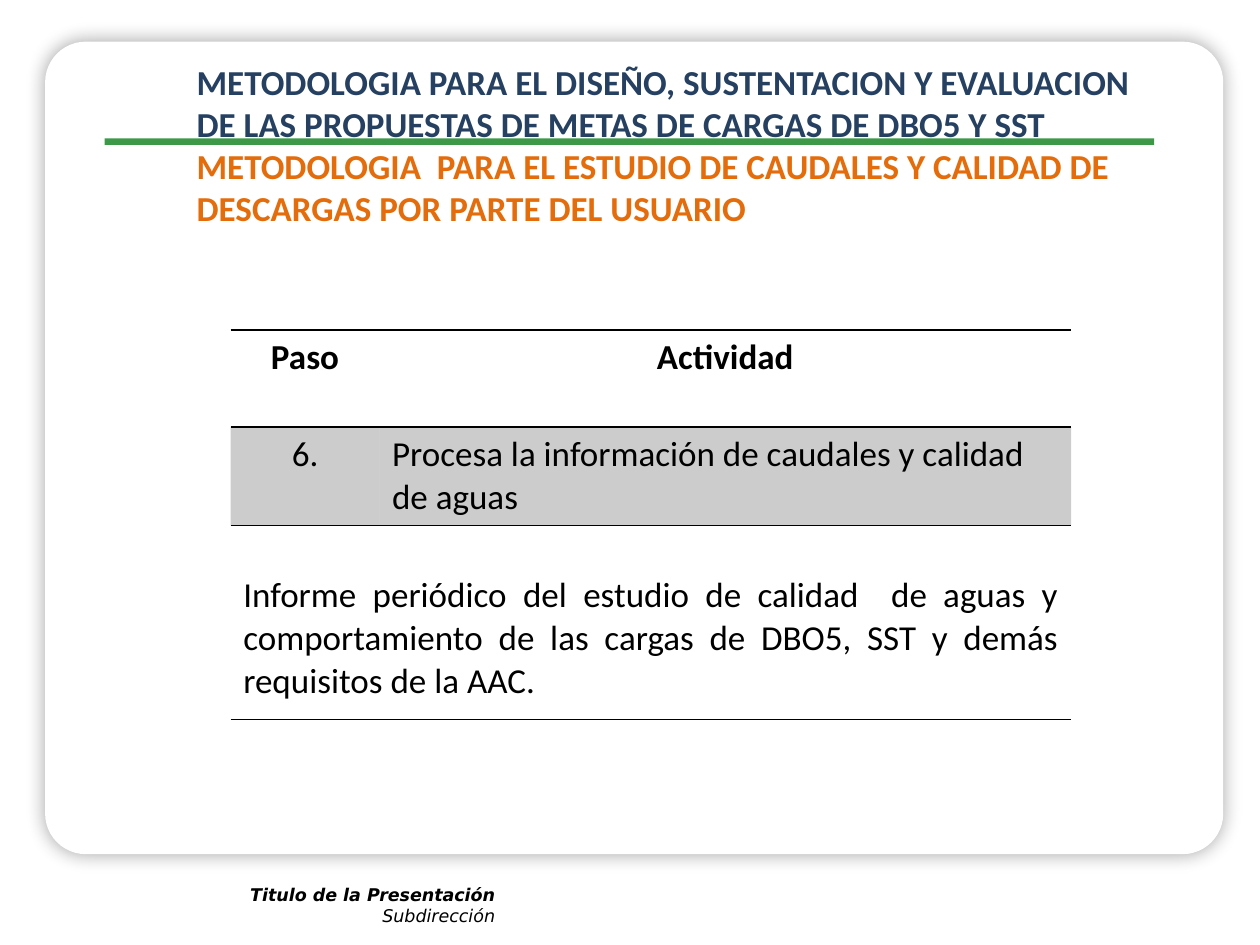
from lxml import etree
from pptx import Presentation
from pptx.dml.color import RGBColor
from pptx.enum.shapes import MSO_SHAPE
from pptx.enum.text import MSO_ANCHOR, MSO_AUTO_SIZE, PP_ALIGN
from pptx.oxml import parse_xml
from pptx.oxml.ns import nsdecls, qn
from pptx.util import Cm, Pt

ROUNDED, RECTANGLE = MSO_SHAPE.ROUNDED_RECTANGLE, MSO_SHAPE.RECTANGLE
TOP, NO_FIT = MSO_ANCHOR.TOP, MSO_AUTO_SIZE.NONE
LEFT, CENTER, RIGHT, JUSTIFY = PP_ALIGN.LEFT, PP_ALIGN.CENTER, PP_ALIGN.RIGHT, PP_ALIGN.JUSTIFY
BLACK = RGBColor(0x00, 0x00, 0x00)
WHITE = RGBColor(0xFF, 0xFF, 0xFF)
GREEN = RGBColor(0x3D, 0x99, 0x48)
NAVY = RGBColor(0x25, 0x40, 0x61)
ORANGE = RGBColor(0xE4, 0x6C, 0x0A)
NO_GRID_STYLE = "{2D5ABB26-0587-4C30-8999-92F81FD0307C}"


def add_run(paragraph, text, size, color, bold=False, italic=False, font="Calibri"):
    run = paragraph.add_run()
    run.text = text
    run.font.name = font
    run.font.size = Pt(size)
    run.font.color.rgb = color
    run.font.bold = bold
    run.font.italic = italic


def add_border(cell, side):
    border = parse_xml(
        f'<a:{side} {nsdecls("a")} w="12700"><a:solidFill>'
        f'<a:srgbClr val="{BLACK}"/></a:solidFill></a:{side}>'
    )
    properties = cell._tc.get_or_add_tcPr()
    properties.insert(len(properties.findall(qn("a:lnT"))), border)


prs = Presentation()
prs.slide_width, prs.slide_height = Cm(25.4), Cm(19.05)
slide = prs.slides.add_slide(prs.slide_layouts[5])
shapes = slide.shapes

panel = shapes.add_shape(ROUNDED, Cm(0.91), Cm(0.84), Cm(23.75), Cm(16.38))
panel.adjustments[0] = 0.05
rule = shapes.add_shape(RECTANGLE, Cm(2.11), Cm(2.79), Cm(21.16), Cm(0.13))
for part, color in ((panel, WHITE), (rule, GREEN)):
    part.fill.solid()
    part.fill.fore_color.rgb = color
    part.line.fill.background()
    part.shadow.inherit = False
effects = panel._element.spPr.find(qn("a:effectLst"))
shadow = etree.SubElement(effects, qn("a:outerShdw"), blurRad=str(Pt(10.8)), dist="0", dir="5400000")
shadow_color = etree.SubElement(shadow, qn("a:srgbClr"), val=str(BLACK))
etree.SubElement(shadow_color, qn("a:alpha"), val="35000")

footer = shapes.add_textbox(Cm(2.03), Cm(17.7), Cm(8.2), Cm(1.12)).text_frame
footer.word_wrap = True
footer_name = footer.paragraphs[0]
footer_name.alignment = RIGHT
add_run(footer_name, "Titulo de la Presentación", 10, BLACK, True, True, "DejaVu Sans")
footer_office = footer.add_paragraph()
footer_office.alignment = RIGHT
add_run(footer_office, "Subdirección", 10, BLACK, False, True, "DejaVu Sans")

title = shapes.title
title.left, title.top, title.width, title.height = Cm(3.71), Cm(1.09), Cm(20.17), Cm(2.97)
shapes._spTree.append(title._element)
title.text_frame.auto_size = NO_FIT
title.text_frame.vertical_anchor = TOP
heading = title.text_frame.paragraphs[0]
heading.alignment = LEFT
add_run(heading, "METODOLOGIA PARA EL DISEÑO, SUSTENTACION Y EVALUACION DE LAS PROPUESTAS "
        "DE METAS DE CARGAS DE DBO5 Y SST", 20, NAVY, True)
heading.add_line_break()
add_run(heading, "METODOLOGIA  PARA EL ESTUDIO DE CAUDALES Y CALIDAD DE DESCARGAS "
        "POR PARTE DEL USUARIO", 20, ORANGE, True)

steps = shapes.add_table(3, 2, Cm(4.65), Cm(6.65), Cm(16.94), Cm(7.83)).table
steps._tbl.tblPr.find(qn("a:tableStyleId")).text = NO_GRID_STYLE
steps.horz_banding = False
for column, width in zip(steps.columns, (3, 13.94)):
    column.width = Cm(width)
for row, height in zip(steps.rows, (1.96, 1.96, 3.91)):
    row.height = Cm(height)
steps.cell(2, 0).merge(steps.cell(2, 1))
steps.cell(2, 0).margin_top = Cm(0.99)

contents = (
    (0, 0, "Paso", CENTER),
    (0, 1, "Actividad", CENTER),
    (1, 0, "6.", CENTER),
    (1, 1, "Procesa la información de caudales y calidad de aguas", LEFT),
    (2, 0, "Informe periódico del estudio de calidad  de aguas y comportamiento "
     "de las cargas de DBO5, SST y demás requisitos de la AAC.", JUSTIFY),
)
for row, column, text, alignment in contents:
    paragraph = steps.cell(row, column).text_frame.paragraphs[0]
    paragraph.alignment = alignment
    add_run(paragraph, text, 20, BLACK, bold=row == 0)

for column in range(2):
    header, step, report = (steps.cell(row, column) for row in range(3))
    header.fill.background()
    report.fill.background()
    step.fill.solid()
    step.fill.fore_color.rgb = BLACK
    step_color = step._tc.tcPr.find(".//" + qn("a:srgbClr"))
    etree.SubElement(step_color, qn("a:alpha"), val="20000")
    add_border(header, "lnT")
    add_border(header, "lnB")
    add_border(step, "lnT")
    add_border(report, "lnB")

prs.save("out.pptx")
